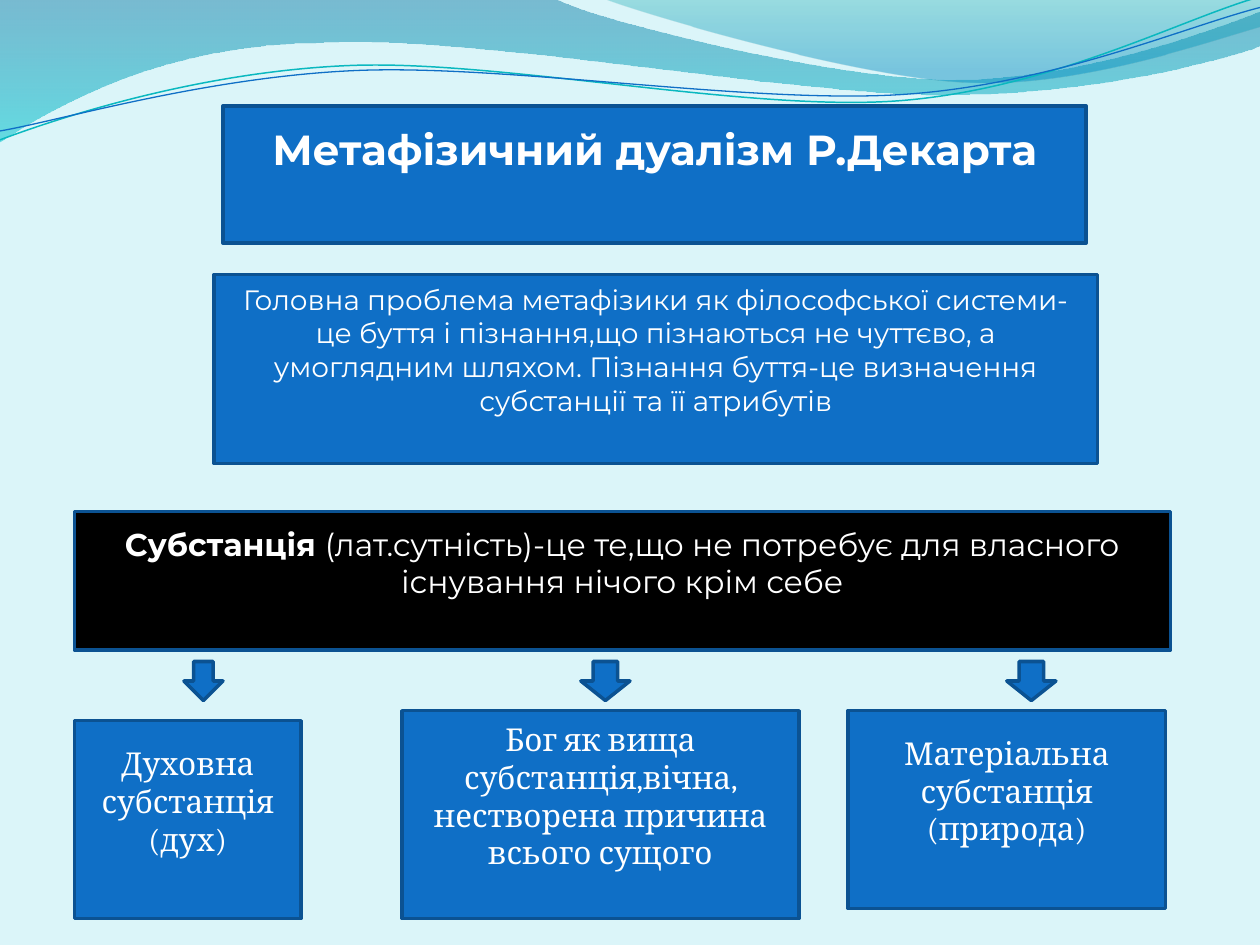
"""Builds a slide on the metaphysical dualism of Descartes."""
from math import cos, radians, sin

from lxml import etree
from pptx import Presentation
from pptx.dml.color import RGBColor
from pptx.enum.shapes import MSO_SHAPE
from pptx.enum.text import MSO_ANCHOR, PP_ALIGN
from pptx.oxml.ns import qn
from pptx.util import Inches, Pt

RECTANGLE, DOWN_ARROW = MSO_SHAPE.RECTANGLE, MSO_SHAPE.DOWN_ARROW
MIDDLE, CENTER = MSO_ANCHOR.MIDDLE, PP_ALIGN.CENTER

COLORS = {
    "background": "DBF5F9", "blue": "0F6FC6", "border": "0B5292",
    "black": "000000", "white": "FFFFFF", "teal": "0AB8BF",
    "deep": "0074A1", "cyan": "00C6CF", "sea": "00A1A9", "azure": "008BBF",
}

BANDS = [
    {"stops": [(0, "deep", 45), (1, "cyan", 55)], "segments": [
        [(0, -0.01)], [(4.4, -0.01)],
        [(4.76, 0.17), (6.64, 0.63), (7.58, 0.63)],
        [(8.53, 0.63), (9.58, 0.26), (10, 0.09)], [(10.01, 0.36)],
        [(9.83, 0.44), (8.7, 0.76), (7.46, 0.75)],
        [(6.22, 0.75), (3.82, 0.28), (2.57, 0.34)],
        [(1.29, 0.35), (0.46, 0.83), (-0.01, 1.13)], [(0, -0.01)]]},
    {"stops": [(0, "sea", 30), (0.8, "azure", 45)], "segments": [
        [(4.79, -0.01)],
        [(5.09, 0.11), (6.82, 0.62), (7.69, 0.65)],
        [(8.56, 0.69), (9.61, 0.32), (10, 0.21)], [(10, 0)], [(4.79, -0.01)]]},
]
WAVES = [
    {"center": (4.99, 0.58), "color": "teal", "width": 0.85, "segments": [
        [(0, 1.11)],
        [(0.48, 0.93), (1.58, 0.57), (2.77, 0.52)],
        [(3.95, 0.47), (5.93, 0.89), (7.13, 0.8)],
        [(8.33, 0.71), (9.38, 0.15), (9.98, -0.02)]]},
    {"center": (5, 0.59), "color": "blue", "width": 0.75, "segments": [
        [(0, 1.04)],
        [(0.47, 0.96), (1.64, 0.61), (2.83, 0.56)],
        [(4.03, 0.51), (5.97, 0.83), (7.17, 0.75)],
        [(8.36, 0.67), (9.41, 0.21), (10, 0.06)]]},
]
WAVE_TILT = 2.7

TITLE = {"name": "Montserrat", "size": Pt(24), "bold": True}
PROBLEM = {"name": "Montserrat", "size": Pt(16), "bold": False}
DEFINITION = {"name": "Montserrat", "size": Pt(18), "bold": False}
TERM = {**DEFINITION, "bold": True}
KIND = {"name": "Cambria", "size": Pt(18), "bold": False}

BOXES = [
    ((1.77, 0.84, 6.85, 1.09), "blue", 0.46, [("Метафізичний дуалізм Р.Декарта", TITLE)]),
    ((0.59, 4.06, 8.7, 1.1), "black", 0.34, [
        ("Субстанція ", TERM),
        ("(лат.сутність)-це те,що не потребує для власного існування нічого "
         "крім себе", DEFINITION)]),
    ((0.59, 5.72, 1.8, 1.57), "blue", 0.35, [("Духовна субстанція (дух)", KIND)]),
    ((3.19, 5.64, 3.15, 1.65), "blue", 0.35, [
        ("Бог як вища субстанція,вічна, нестворена причина всього сущого", KIND)]),
    ((6.73, 5.64, 2.52, 1.57), "blue", 0.35, [("Матеріальна субстанція (природа)", KIND)]),
    ((1.7, 2.18, 7.01, 1.5), "blue", 0.36, [
        ("Головна проблема метафізики як філософської системи-це буття і "
         "пізнання,що пізнаються не чуттєво, а умоглядним шляхом. Пізнання "
         "буття-це визначення субстанції та її атрибутів", PROBLEM)]),
]
ARROWS = [(1.46, 0.31), (4.61, 0.39), (7.99, 0.39)]
ARROW_TOP, ARROW_HEIGHT = 5.25, 0.31


def rgb(color):
    return RGBColor.from_string(COLORS[color])


def turn(point, center, degrees):
    """Turn a point clockwise about a center."""
    dx, dy = point[0] - center[0], point[1] - center[1]
    c, s = cos(radians(degrees)), sin(radians(degrees))
    return center[0] + dx * c - dy * s, center[1] + dx * s + dy * c


def add_outline(slide, segments, close):
    """Draw segments of one point as lines and of three points as cubic curves."""
    first, *rest = [(Inches(x), Inches(y)) for segment in segments for x, y in segment]
    builder = slide.shapes.build_freeform(*first)
    builder.add_line_segments(rest, close=close)
    outline = builder.convert_to_shape()
    outline.shadow.inherit = False
    steps = iter(list(outline._element.spPr.iter(qn("a:lnTo"))))
    for segment in segments[1:]:
        knots = [next(steps) for _ in segment]
        if len(knots) == 3:
            curve = etree.Element(qn("a:cubicBezTo"))
            knots[0].addprevious(curve)
            for knot in knots:
                curve.append(knot[0])
                knot.getparent().remove(knot)
    return outline


def add_band(slide, band):
    outline = add_outline(slide, band["segments"], True)
    outline.line.fill.background()
    outline.fill.gradient()
    outline.fill.gradient_angle = 270
    for stop, (position, color, _) in zip(outline.fill.gradient_stops, band["stops"]):
        stop.position = position
        stop.color.rgb = rgb(color)
    tints = outline._element.spPr.iter(qn("a:srgbClr"))
    for tint, (_, _, opacity) in zip(tints, band["stops"]):
        etree.SubElement(tint, qn("a:alpha")).set("val", str(opacity * 1000))


def add_wave(slide, wave):
    level = [[turn(point, wave["center"], WAVE_TILT) for point in segment]
             for segment in wave["segments"]]
    outline = add_outline(slide, level, False)
    outline.rotation = 360 - WAVE_TILT
    outline.fill.background()
    outline.line.color.rgb = rgb(wave["color"])
    outline.line.width = Pt(wave["width"])


def add_block(slide, kind, place, color):
    block = slide.shapes.add_shape(kind, *map(Inches, place))
    block.shadow.inherit = False
    block.fill.solid()
    block.fill.fore_color.rgb = rgb(color)
    block.line.color.rgb = rgb("border")
    block.line.width = Pt(2)
    return block


def add_box(slide, place, color, bottom, wording):
    frame = add_block(slide, RECTANGLE, place, color).text_frame
    layout = {"word_wrap": True, "vertical_anchor": MIDDLE, "margin_bottom": Inches(bottom)}
    for name, value in layout.items():
        setattr(frame, name, value)
    paragraph = frame.paragraphs[0]
    paragraph.alignment = CENTER
    for text, style in wording:
        run = paragraph.add_run()
        run.text = text
        run.font.color.rgb = rgb("white")
        for name, value in style.items():
            setattr(run.font, name, value)


def main():
    deck = Presentation()
    deck.slide_width, deck.slide_height = Inches(10), Inches(7.5)
    slide = deck.slides.add_slide(deck.slide_layouts[6])
    slide.background.fill.solid()
    slide.background.fill.fore_color.rgb = rgb("background")
    for band in BANDS:
        add_band(slide, band)
    for wave in WAVES:
        add_wave(slide, wave)
    for box in BOXES:
        add_box(slide, *box)
    for left, width in ARROWS:
        add_block(slide, DOWN_ARROW, (left, ARROW_TOP, width, ARROW_HEIGHT), "blue")
    deck.save("out.pptx")


if __name__ == "__main__":
    main()
